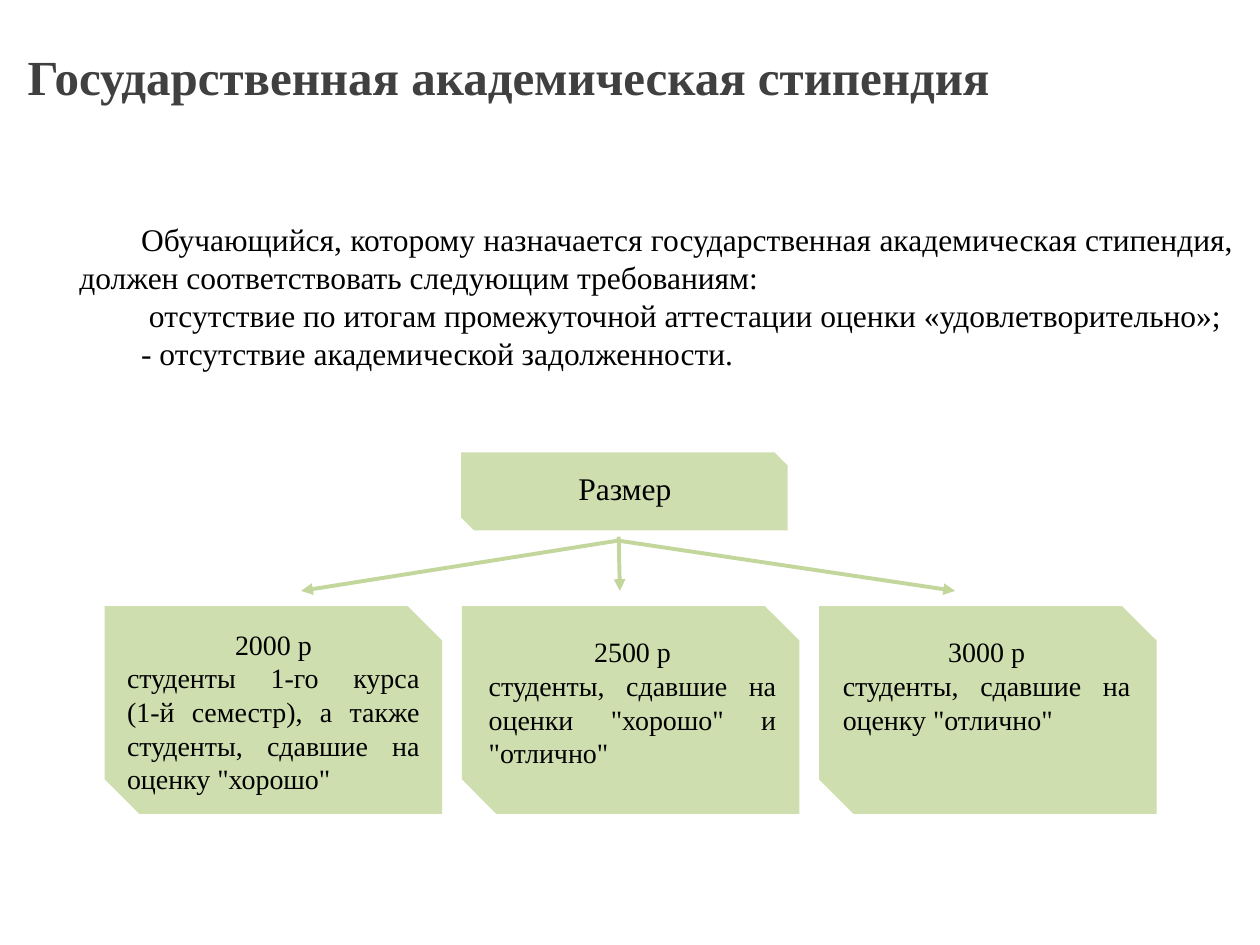
from dataclasses import dataclass

from lxml.etree import SubElement
from pptx import Presentation
from pptx.dml.color import RGBColor
from pptx.enum.shapes import MSO_CONNECTOR as Conn, MSO_SHAPE as Shape
from pptx.enum.text import MSO_ANCHOR as Anchor, PP_ALIGN as Align
from pptx.oxml.ns import qn
from pptx.util import Inches, Pt


@dataclass(frozen=True)
class Theme:
    font: str = "Times New Roman"
    heading: RGBColor = RGBColor(0x40, 0x40, 0x40)
    ink: RGBColor = RGBColor(0, 0, 0)
    green: RGBColor = RGBColor(0xC3, 0xD6, 0x9B)
    card_opacity: int = 80000
    title_size: int = 28
    body_size: int = 18
    card_size: int = 16
    line_width: float = 2.25


@dataclass(frozen=True)
class Box:
    left: float
    top: float
    width: float
    height: float

    def emu(self) -> list:
        return [Inches(v) for v in (self.left, self.top, self.width, self.height)]


@dataclass(frozen=True)
class Grant:
    amount: str
    students: str
    text_box: Box


@dataclass(frozen=True)
class Arrow:
    start: tuple[float, float]
    end: tuple[float, float]


THEME = Theme()

REQUIREMENTS = [
    "Обучающийся, которому назначается государственная академическая стипендия, "
    "должен соответствовать следующим требованиям:",
    " отсутствие по итогам промежуточной аттестации оценки «удовлетворительно»;",
    "- отсутствие академической задолженности.",
]

GRANTS = [
    Grant("2000 р",
          "студенты 1-го курса\n(1-й семестр), а также студенты, сдавшие на оценку \"хорошо\"",
          Box(0.91, 4.93, 2.52, 1.45)),
    Grant("2500 р", "студенты, сдавшие на оценки \"хорошо\" и \"отлично\"",
          Box(3.78, 4.99, 2.48, 1.17)),
    Grant("3000 р", "студенты, сдавшие на оценку \"отлично\"",
          Box(6.59, 4.99, 2.48, 0.9)),
]

ARROWS = [
    Arrow((4.91, 4.26), (4.92, 4.69)),
    Arrow((4.91, 4.29), (2.39, 4.69)),
    Arrow((4.9, 4.29), (7.58, 4.69)),
]

CARD_LEFT, CARD_STEP = 0.83, 2.835


def add_run(p, text: str, size: int, color: RGBColor = THEME.ink, bold: bool = False) -> None:
    """Add the text to a paragraph, one run for each forced line."""
    for i, line in enumerate(text.split("\n")):
        if i:
            p.add_line_break()
        r = p.add_run()
        r.text = line
        r.font.name, r.font.size = THEME.font, Pt(size)
        r.font.bold, r.font.color.rgb = bold, color


def add_text(s, box: Box, lines: list[tuple[str, Align]], size: int,
             inset: float = 0.1, indent: float = 0) -> None:
    tf = s.shapes.add_textbox(*box.emu()).text_frame
    tf.word_wrap = True
    tf.margin_left = Inches(inset)
    for i, (text, align) in enumerate(lines):
        p = tf.add_paragraph() if i else tf.paragraphs[0]
        p.alignment = align
        if indent:
            pPr = p._p.get_or_add_pPr()
            pPr.set("marL", "0")
            pPr.set("indent", str(Inches(indent)))
        add_run(p, text, size)


def add_card(s, box: Box) -> None:
    sp = s.shapes.add_shape(Shape.SNIP_2_DIAG_RECTANGLE, *box.emu())
    sp.shadow.inherit = False
    sp.fill.solid()
    sp.fill.fore_color.rgb = THEME.green
    sp.line.fill.background()
    color = sp._element.spPr.find(qn("a:solidFill")).find(qn("a:srgbClr"))
    SubElement(color, qn("a:alpha"), val=str(THEME.card_opacity))


def add_arrow(s, arrow: Arrow) -> None:
    ends = [Inches(v) for v in (*arrow.start, *arrow.end)]
    cxn = s.shapes.add_connector(Conn.STRAIGHT, *ends)
    cxn.line.color.rgb = THEME.green
    cxn.line.width = Pt(THEME.line_width)
    SubElement(cxn.line._get_or_add_ln(), qn("a:tailEnd"), type="triangle")
    SubElement(cxn._element.spPr, qn("a:effectLst"))


def add_title(s, text: str, box: Box) -> None:
    title = s.shapes.title
    title.left, title.top, title.width, title.height = box.emu()
    tf = title.text_frame
    tf.vertical_anchor = Anchor.MIDDLE
    p = tf.paragraphs[0]
    p.alignment = Align.LEFT
    add_run(p, text, THEME.title_size, THEME.heading, bold=True)


def main() -> None:
    prs = Presentation()
    prs.slide_width, prs.slide_height = Inches(10), Inches(7.5)
    s = prs.slides.add_slide(prs.slide_layouts[5])

    # Title and requirements
    add_title(s, "Государственная академическая стипендия", Box(0.12, 0.02, 9.88, 1.17))
    add_text(s, Box(0.2, 1.7, 9.69, 1.73), [(t, Align.JUSTIFY) for t in REQUIREMENTS],
             THEME.body_size, inset=0.43, indent=0.49)

    # Root of the diagram
    add_card(s, Box(3.66, 3.59, 2.59, 0.62))
    add_text(s, Box(3.83, 3.67, 2.26, 0.4), [("Размер", Align.CENTER)], THEME.body_size)

    # One card for each grant
    for i, grant in enumerate(GRANTS):
        add_card(s, Box(CARD_LEFT + i * CARD_STEP, 4.81, 2.68, 1.65))
        add_text(s, grant.text_box,
                 [(grant.amount, Align.CENTER), (grant.students, Align.JUSTIFY)],
                 THEME.card_size)

    # Arrows from the root to the cards
    for arrow in ARROWS:
        add_arrow(s, arrow)

    prs.save("out.pptx")


if __name__ == "__main__":
    main()
